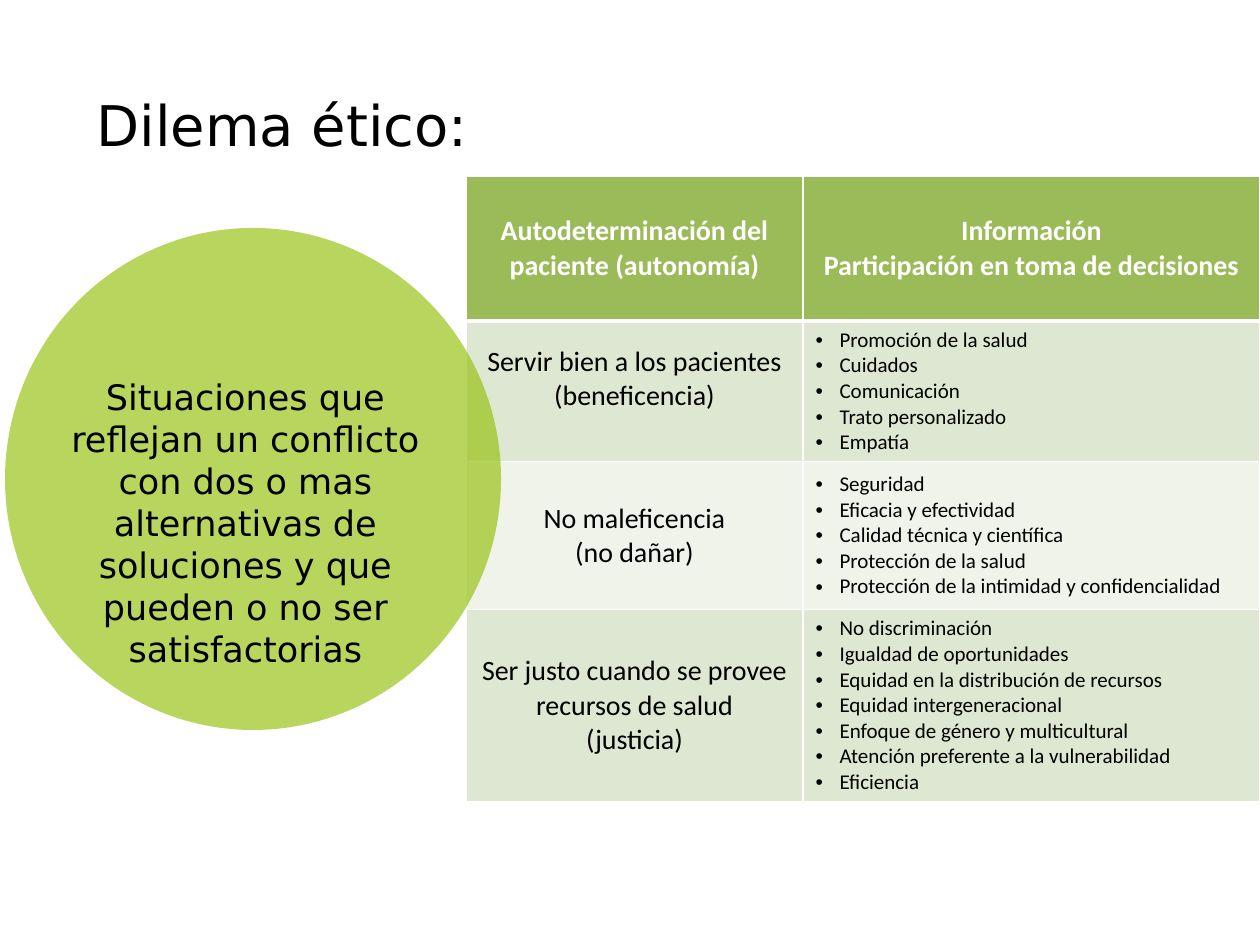
from lxml.etree import SubElement
from pptx import Presentation
from pptx.dml.color import RGBColor
from pptx.enum.shapes import MSO_SHAPE
from pptx.enum.text import MSO_ANCHOR, MSO_AUTO_SIZE, PP_ALIGN
from pptx.oxml.ns import qn
from pptx.util import Pt

PX = 914400 // 126
COLORS = {"text": "000000", "white": "FFFFFF", "header": "9BBB59",
          "band": "DEE7D1", "light": "EFF3EA", "circle": "8FBE00"}

TITLE = "Dilema ético:"
DEFINITION = ("Situaciones que reflejan un conflicto con dos o mas alternativas "
              "de soluciones y que pueden o no ser satisfactorias")
HEADERS = [["Autodeterminación del paciente (autonomía)"],
           ["Información", "Participación en toma de decisiones"]]
PRINCIPLES = [
    (["Servir bien a los pacientes", "(beneficencia)"],
     ["Promoción de la salud", "Cuidados", "Comunicación",
      "Trato personalizado", "Empatía"]),
    (["No maleficencia", "(no dañar)"],
     ["Seguridad", "Eficacia y efectividad", "Calidad técnica y científica",
      "Protección de la salud",
      "Protección de la intimidad y confidencialidad"]),
    (["Ser justo cuando se provee recursos de salud", "(justicia)"],
     ["No discriminación", "Igualdad de oportunidades",
      "Equidad en la distribución de recursos", "Equidad intergeneracional",
      "Enfoque de género y multicultural",
      "Atención preferente a la vulnerabilidad", "Eficiencia"]),
]

TITLE_BOX = (84, 84, 1206, 81)
TABLE_AT = (466, 176)
COLUMN_WIDTHS = [337, 457]
ROW_HEIGHTS = [145, 140, 148, 191]
CIRCLE_BOX = (5, 228, 496, 502)
DEFINITION_BOX = (49, 369, 393, 190)
BULLET_INDENT = 24
RAISED_BY = 24

TITLE_FONT = {"name": "DejaVu Sans", "size": Pt(32), "bold": False}
DEFINITION_FONT = {"name": "DejaVu Sans", "size": Pt(20)}
HEADER_FONT = {"name": "Calibri", "size": Pt(16), "bold": True}
PRINCIPLE_FONT = {"name": "Calibri", "size": Pt(16), "bold": False}
BULLET_FONT = {"name": "Calibri", "size": Pt(12), "bold": False}


def emu(lengths):
    return [length * PX for length in lengths]


def write(frame, lines, font, color="text", align=PP_ALIGN.CENTER, bullets=False):
    for index, line in enumerate(lines):
        paragraph = frame.paragraphs[0] if index == 0 else frame.add_paragraph()
        paragraph.alignment = align
        if bullets:
            properties = paragraph._p.get_or_add_pPr()
            properties.set("marL", str(BULLET_INDENT * PX))
            properties.set("indent", str(-BULLET_INDENT * PX))
            SubElement(properties, qn("a:buFont"), typeface="Arial")
            SubElement(properties, qn("a:buChar"), char="•")
        run = paragraph.add_run()
        run.text = line
        for name, value in font.items():
            setattr(run.font, name, value)
        run.font.color.rgb = RGBColor.from_string(COLORS[color])


def style_cell(cell, fill, top=1, bottom=1):
    """White borders, with top and bottom widths in points, and a plain fill."""
    properties = cell._tc.get_or_add_tcPr()
    for side, width in {"L": 1, "R": 1, "T": top, "B": bottom}.items():
        line = SubElement(properties, qn(f"a:ln{side}"), w=str(Pt(width)))
        solid = SubElement(line, qn("a:solidFill"))
        SubElement(solid, qn("a:srgbClr"), val=COLORS["white"])
    cell.fill.solid()
    cell.fill.fore_color.rgb = RGBColor.from_string(COLORS[fill])
    cell.vertical_anchor = MSO_ANCHOR.MIDDLE


def add_title(slide):
    title = slide.shapes.title
    title.left, title.top, title.width, title.height = emu(TITLE_BOX)
    title.text_frame.vertical_anchor = MSO_ANCHOR.TOP
    write(title.text_frame, [TITLE], TITLE_FONT, align=PP_ALIGN.LEFT)


def add_principles(slide):
    size = (sum(COLUMN_WIDTHS), sum(ROW_HEIGHTS))
    table = slide.shapes.add_table(
        len(ROW_HEIGHTS), len(COLUMN_WIDTHS), *emu(TABLE_AT + size)).table
    for column, width in zip(table.columns, emu(COLUMN_WIDTHS)):
        column.width = width
    for row, height in zip(table.rows, emu(ROW_HEIGHTS)):
        row.height = height

    for column, lines in enumerate(HEADERS):
        cell = table.cell(0, column)
        style_cell(cell, "header", bottom=3)
        write(cell.text_frame, lines, HEADER_FONT, "white")
    for row, (principle, examples) in enumerate(PRINCIPLES, start=1):
        name_cell, example_cell = table.cell(row, 0), table.cell(row, 1)
        for cell in (name_cell, example_cell):
            style_cell(cell, "band" if row % 2 else "light", top=3 if row == 1 else 1)
        write(name_cell.text_frame, principle, PRINCIPLE_FONT)
        write(example_cell.text_frame, examples, BULLET_FONT,
              align=PP_ALIGN.LEFT, bullets=True)
    beneficence = table.cell(1, 0)
    beneficence.margin_bottom += RAISED_BY * PX


def add_definition(slide):
    group = slide.shapes.add_group_shape()
    circle = group.shapes.add_shape(MSO_SHAPE.OVAL, *emu(CIRCLE_BOX))
    circle.shadow.inherit = False
    circle.line.fill.background()
    circle.fill.solid()
    circle.fill.fore_color.rgb = RGBColor.from_string(COLORS["circle"])
    color = circle._element.spPr.find(f"{qn('a:solidFill')}/{qn('a:srgbClr')}")
    SubElement(color, qn("a:alpha"), val="63000")

    frame = group.shapes.add_textbox(*emu(DEFINITION_BOX)).text_frame
    frame.word_wrap = True
    frame.auto_size = MSO_AUTO_SIZE.SHAPE_TO_FIT_TEXT
    write(frame, [DEFINITION], DEFINITION_FONT)


def main():
    deck = Presentation()
    deck.slide_width, deck.slide_height = emu((1260, 945))
    slide = deck.slides.add_slide(deck.slide_layouts[5])
    add_title(slide)
    add_principles(slide)
    add_definition(slide)
    deck.save("out.pptx")


if __name__ == "__main__":
    main()
